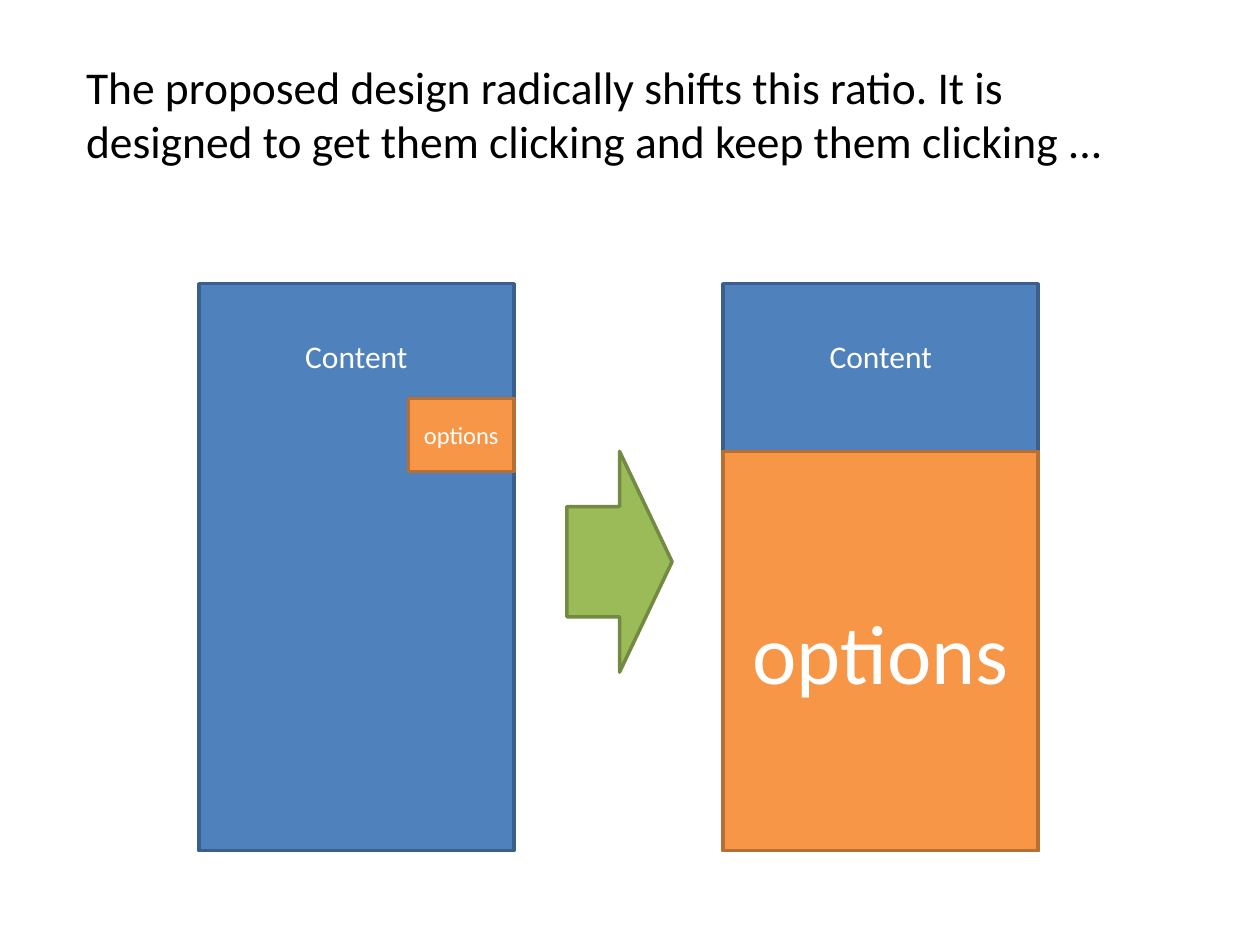
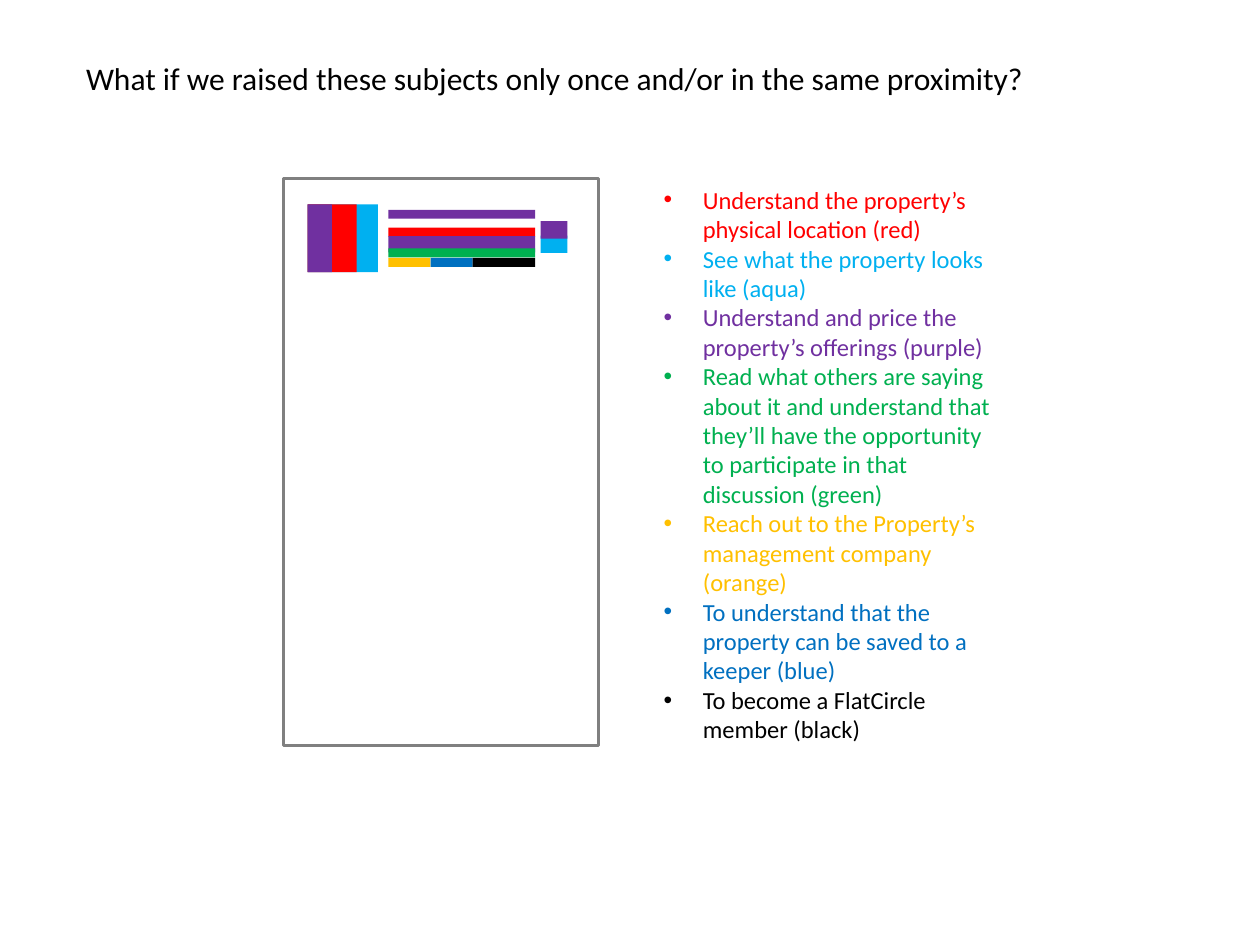
from lxml import etree
from pptx import Presentation
from pptx import util as u
from pptx.dml.color import RGBColor
from pptx.enum import shapes, text
from pptx.oxml.ns import qn

FONT = "Calibri"
WHITE = RGBColor(0xFF, 0xFF, 0xFF)
BLACK = RGBColor(0x00, 0x00, 0x00)
GRAY = RGBColor(0x80, 0x80, 0x80)
CONTENT_FILL = RGBColor(0x4F, 0x81, 0xBD)
CONTENT_LINE = RGBColor(0x3A, 0x5F, 0x8C)
OPTIONS_FILL = RGBColor(0xF7, 0x96, 0x46)
OPTIONS_LINE = RGBColor(0xB7, 0x6F, 0x34)
ARROW_FILL = RGBColor(0x9B, 0xBB, 0x59)
ARROW_LINE = RGBColor(0x73, 0x8A, 0x42)
RED = RGBColor(0xFF, 0x00, 0x00)
AQUA = RGBColor(0x00, 0xB0, 0xF0)
PURPLE = RGBColor(0x70, 0x30, 0xA0)
GREEN = RGBColor(0x00, 0xB0, 0x50)
ORANGE = RGBColor(0xFF, 0xC0, 0x00)
BLUE = RGBColor(0x00, 0x70, 0xC0)

PAGE_WIDTH, PAGE_HEIGHT = 6.35, 11.43

SUBJECTS = [
    ("Understand the property’s physical location (red)", RED),
    ("See what the property looks like (aqua)", AQUA),
    ("Understand and price the property’s offerings (purple)", PURPLE),
    ("Read what others are saying about it and understand that they’ll have "
     "the opportunity to participate in that discussion (green)", GREEN),
    ("Reach out to the Property’s management company (orange)", ORANGE),
    ("To understand that the property can be saved to a keeper (blue)", BLUE),
    ("To become a FlatCircle member (black)", BLACK),
]


def style_font(para, size, color):
    para.font.name = FONT
    para.font.size = u.Pt(size)
    para.font.color.rgb = color


def add_titled_slide(deck, title, size, width, height):
    slide = deck.slides.add_slide(deck.slide_layouts[5])
    box = slide.shapes.title
    box.left, box.top = u.Cm(1.48), u.Cm(1.06)
    box.width, box.height = u.Cm(width), u.Cm(height)
    frame = box.text_frame
    frame.text = title
    frame.auto_size = text.MSO_AUTO_SIZE.NONE
    frame.vertical_anchor = text.MSO_ANCHOR.TOP
    para = frame.paragraphs[0]
    para.alignment = text.PP_ALIGN.LEFT
    style_font(para, size, BLACK)
    return slide


def add_block(slide, left, top, width, height, fill, line=None,
              kind=shapes.MSO_SHAPE.RECTANGLE):
    block = slide.shapes.add_shape(
        kind, u.Cm(left), u.Cm(top), u.Cm(width), u.Cm(height))
    block.shadow.inherit = False
    block.fill.solid()
    block.fill.fore_color.rgb = fill
    if line is None:
        block.line.fill.background()
    else:
        block.line.color.rgb = line
        block.line.width = u.Pt(2)
    return block


def label_block(block, label, size, anchor=text.MSO_ANCHOR.MIDDLE):
    frame = block.text_frame
    frame.text = label
    frame.vertical_anchor = anchor
    para = frame.paragraphs[0]
    para.alignment = text.PP_ALIGN.CENTER
    style_font(para, size, WHITE)


def add_content_page(slide, left, top):
    page = add_block(slide, left, top, PAGE_WIDTH, PAGE_HEIGHT,
                     CONTENT_FILL, CONTENT_LINE)
    label_block(page, "Content", 18, text.MSO_ANCHOR.TOP)
    page.text_frame.margin_top = u.Cm(1.07)


def add_options(slide, left, top, width, height, size):
    block = add_block(slide, left, top, width, height,
                      OPTIONS_FILL, OPTIONS_LINE)
    label_block(block, "options", size)


def add_bullet(para, color):
    props = para._p.get_or_add_pPr()
    indent = u.Cm(0.79)
    props.set("marL", str(indent))
    props.set("indent", str(-indent))
    bullet_color = etree.SubElement(props, qn("a:buClr"))
    etree.SubElement(bullet_color, qn("a:srgbClr"), val=str(color))
    etree.SubElement(props, qn("a:buFont"), typeface="Arial")
    etree.SubElement(props, qn("a:buChar"), char="•")


def add_subject_list(slide, left, top, width, height):
    box = slide.shapes.add_textbox(
        u.Cm(left), u.Cm(top), u.Cm(width), u.Cm(height))
    frame = box.text_frame
    frame.word_wrap = True
    for index, (subject, color) in enumerate(SUBJECTS):
        para = frame.add_paragraph() if index else frame.paragraphs[0]
        para.text = subject
        add_bullet(para, color)
        style_font(para, 14, color)


def add_listing_sketch(slide):
    """Draw one listing as bars coloured by the subject they raise."""
    photo_left, photo_top, photo_height = 6.2, 4.12, 1.37
    for width, color in [(1.42, AQUA), (0.99, RED), (0.49, PURPLE)]:
        add_block(slide, photo_left, photo_top, width, photo_height, color)

    bar_left, bar_width, bar_height = 7.83, 2.96, 0.18
    for top, height, color in [(4.23, bar_height, PURPLE),
                               (4.59, bar_height, RED),
                               (4.76, 0.33, PURPLE),
                               (5.01, bar_height, GREEN)]:
        add_block(slide, bar_left, top, bar_width, height, color)

    left = bar_left
    for width, color in [(0.85, ORANGE), (0.85, BLUE), (1.26, BLACK)]:
        add_block(slide, left, 5.2, width, bar_height, color)
        left += width

    for top, color in [(4.75, AQUA), (4.46, PURPLE)]:
        add_block(slide, 10.9, top, 0.54, 0.35, color)


def build_ratio_slide(deck):
    slide = add_titled_slide(
        deck, "The proposed design radically shifts this ratio. It is designed "
        "to get them clicking and keep them clicking ...", 26, 21.59, 2.49)
    before_left, after_left, page_top = 4.01, 14.58, 5.72
    options_top = 9.1
    small_width = 2.12
    add_content_page(slide, before_left, page_top)
    add_options(slide, before_left + PAGE_WIDTH - small_width, 8.03,
                small_width, 1.48, 14)
    add_content_page(slide, after_left, page_top)
    add_options(slide, after_left, options_top, PAGE_WIDTH,
                page_top + PAGE_HEIGHT - options_top, 48)
    add_block(slide, 11.43, options_top, small_width, 4.45, ARROW_FILL,
              ARROW_LINE, shapes.MSO_SHAPE.RIGHT_ARROW)


def build_subjects_slide(deck):
    slide = add_titled_slide(
        deck, "What if we raised these subjects only once and/or in the same "
        "proximity?", 18, 23.06, 1.02)
    top = 3.6
    add_block(slide, 5.72, top, PAGE_WIDTH, PAGE_HEIGHT, WHITE, GRAY)
    add_subject_list(slide, 13.13, top, 7.41, 12.83)
    add_listing_sketch(slide)


def main():
    deck = Presentation()
    deck.slide_width, deck.slide_height = u.Cm(25.4), u.Cm(19.05)
    build_ratio_slide(deck)
    build_subjects_slide(deck)
    deck.save("out.pptx")


if __name__ == "__main__":
    main()
